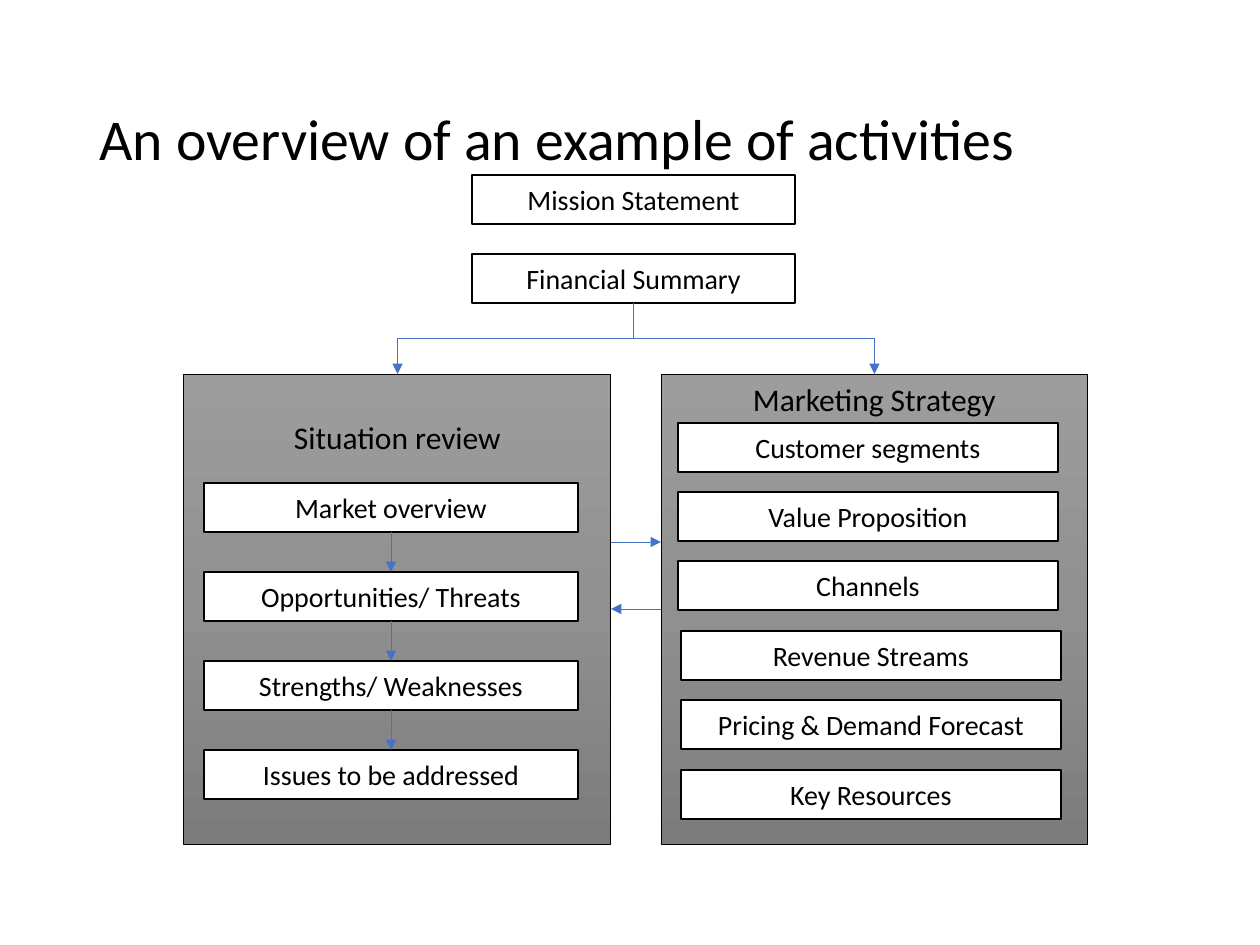
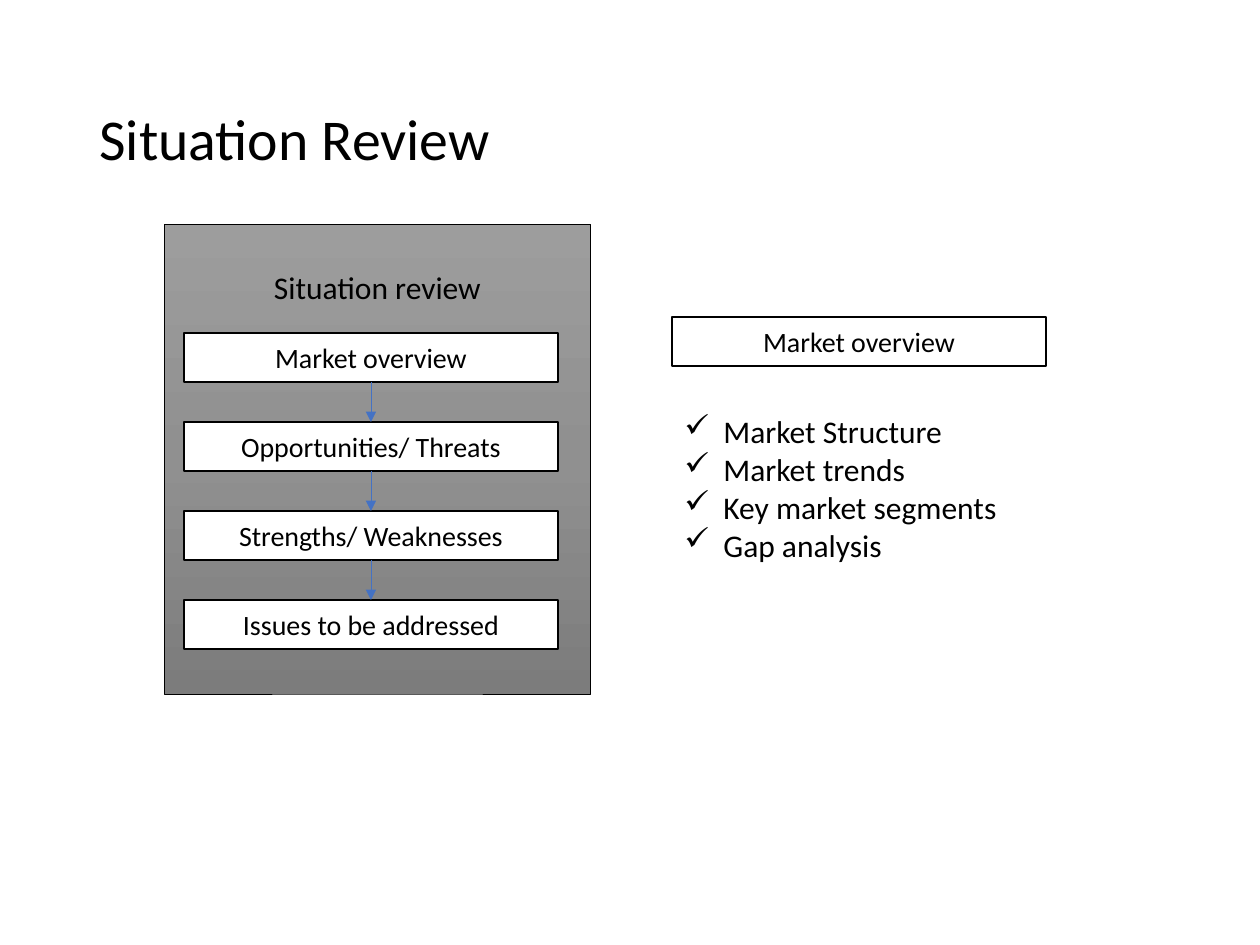
from lxml import etree
from pptx import Presentation
from pptx.dml.color import RGBColor
from pptx.enum.shapes import MSO_CONNECTOR, MSO_SHAPE
from pptx.enum.text import MSO_ANCHOR, MSO_AUTO_SIZE, PP_ALIGN
from pptx.oxml.ns import qn
from pptx.util import Emu, Pt

STRAIGHT, ELBOW = MSO_CONNECTOR.STRAIGHT, MSO_CONNECTOR.ELBOW
RECTANGLE = MSO_SHAPE.RECTANGLE
TOP, MIDDLE = MSO_ANCHOR.TOP, MSO_ANCHOR.MIDDLE
LEFT, CENTER = PP_ALIGN.LEFT, PP_ALIGN.CENTER
FIT_SHAPE = MSO_AUTO_SIZE.SHAPE_TO_FIT_TEXT
SIDE_TOP, SIDE_LEFT, SIDE_BOTTOM, SIDE_RIGHT = range(4)

PX_PER_INCH = 126
FONT = "Calibri"
COLORS = {
    "text": "000000",
    "outline": "000000",
    "box": "FFFFFF",
    "arrow": "4472C4",
    "panel_top": "9D9D9D",
    "panel_middle": "909090",
    "panel_bottom": "7C7C7C",
}
PANEL_STOPS = {0: "panel_top", 50000: "panel_middle", 100000: "panel_bottom"}
PANEL_WIDTH, PANEL_HEIGHT = 427, 470
PANEL_INSET, HEADING_LINE = 6, 38
BOX_HEIGHT = 49
STEP_WIDTH, STEP_PITCH = 374, 89
STEP_OFFSET_X, STEP_OFFSET_Y = 20, 109

REVIEW_STEPS = ["Market overview", "Opportunities/ Threats",
                "Strengths/ Weaknesses", "Issues to be addressed"]
STRATEGY_PARTS = ["Customer segments", "Value Proposition", "Channels",
                  "Revenue Streams", "Pricing & Demand Forecast", "Key Resources"]
OVERVIEW_POINTS = ["Market Structure", "Market trends",
                   "Key market segments", "Gap analysis"]


def px(length):
    """Turn px into EMU."""
    return Emu(round(length * 914400 / PX_PER_INCH))


def color(key):
    """Look up a colour of the palette."""
    return RGBColor.from_string(COLORS[key])


def format_text(frame, size, align, anchor):
    """Give all the text of a frame its font and alignment."""
    frame.word_wrap = True
    frame.vertical_anchor = anchor
    for paragraph in frame.paragraphs:
        paragraph.alignment = align
        for run in paragraph.runs:
            run.font.name = FONT
            run.font.size = Pt(size)
            run.font.color.rgb = color("text")


def add_title(slide, wording):
    """Add the slide title."""
    title = slide.shapes.add_textbox(px(87), px(50), px(1086), px(183))
    title.text_frame.text = wording
    title.text_frame.paragraphs[0].line_spacing = 0.9
    format_text(title.text_frame, 33, LEFT, MIDDLE)


def add_rectangle(slide, left, top, width, height, line_width):
    """Add an outlined rectangle without shadow."""
    rectangle = slide.shapes.add_shape(
        RECTANGLE, px(left), px(top), px(width), px(height))
    rectangle.shadow.inherit = False
    rectangle.line.color.rgb = color("outline")
    rectangle.line.width = Pt(line_width)
    return rectangle


def add_box(slide, label, left, top, width):
    """Add a white box with a centred label."""
    box = add_rectangle(slide, left, top, width, BOX_HEIGHT, 1)
    box.fill.solid()
    box.fill.fore_color.rgb = color("box")
    box.text_frame.text = label
    format_text(box.text_frame, 16, CENTER, MIDDLE)
    return box


def add_panel(slide, heading, left, top, heading_drop=0):
    """Add a grey gradient panel with its heading at the top."""
    panel = add_rectangle(slide, left, top, PANEL_WIDTH, PANEL_HEIGHT, 0.5)
    panel.fill.gradient()
    panel.fill.gradient_angle = 270
    stops = next(panel._element.iter(qn("a:gsLst")))
    for stop in list(stops):
        stops.remove(stop)
    for position, key in PANEL_STOPS.items():
        stop = etree.SubElement(stops, qn("a:gs"), pos=str(position))
        etree.SubElement(stop, qn("a:srgbClr"), val=COLORS[key])
    panel.text_frame.text = heading
    panel.text_frame.margin_top = px(PANEL_INSET + heading_drop)
    format_text(panel.text_frame, 18, CENTER, TOP)
    return panel


def add_arrow(slide, kind, start=(0, 0), end=(0, 0)):
    """Add a thin blue arrow between two points."""
    arrow = slide.shapes.add_connector(kind, *map(px, start + end))
    arrow.line.color.rgb = color("arrow")
    arrow.line.width = Pt(0.5)
    etree.SubElement(arrow.line._get_or_add_ln(), qn("a:tailEnd"), type="triangle")
    etree.SubElement(arrow._element.spPr, qn("a:effectLst"))
    return arrow


def join(slide, source, source_side, target, target_side, kind=STRAIGHT):
    """Join the sides of two rectangles with an arrow."""
    arrow = add_arrow(slide, kind)
    arrow.begin_connect(source, source_side)
    arrow.end_connect(target, target_side)
    return arrow


def add_branch(slide, source, target):
    """Add an elbow arrow that leaves downwards and enters from above."""
    branch = join(slide, source, SIDE_BOTTOM, target, SIDE_TOP, ELBOW)
    to_right = branch.end_x > branch.begin_x
    center_x = (branch.begin_x + branch.end_x) // 2
    center_y = (branch.begin_y + branch.end_y) // 2
    drop, reach = branch.height, branch.width
    branch.left, branch.top = center_x - drop // 2, center_y - reach // 2
    branch.width, branch.height = drop, reach
    frame = branch._element.spPr.find(qn("a:xfrm"))
    frame.set("rot", "16200000" if to_right else "5400000")
    frame.set("flipH", "1" if to_right else "0")


def add_review_panel(slide, left, top):
    """Add the situation review panel."""
    return add_panel(slide, "Situation review", left, top, HEADING_LINE)


def add_review_steps(slide, panel_left, panel_top):
    """Add the chain of review steps over its panel."""
    steps = [add_box(slide, label, panel_left + STEP_OFFSET_X,
                     panel_top + STEP_OFFSET_Y + index * STEP_PITCH, STEP_WIDTH)
             for index, label in enumerate(REVIEW_STEPS)]
    for step, following in zip(steps, steps[1:]):
        join(slide, step, SIDE_BOTTOM, following, SIDE_TOP)


def add_strategy_parts(slide, first_top, last_top):
    """Spread the strategy parts evenly, the lower half slightly indented."""
    last = len(STRATEGY_PARTS) - 1
    for index, label in enumerate(STRATEGY_PARTS):
        left = 678 if index <= last // 2 else 681
        top = first_top + (last_top - first_top) * index // last
        add_box(slide, label, left, top, 380)


def add_checklist(slide, points, left, top, width, height):
    """Add a list with check marks as bullets."""
    checklist = slide.shapes.add_textbox(px(left), px(top), px(width), px(height))
    frame = checklist.text_frame
    frame.text = "\n".join(points)
    format_text(frame, 18, LEFT, TOP)
    frame.auto_size = FIT_SHAPE
    indent = px(39)
    for paragraph in frame.paragraphs:
        properties = paragraph._p.get_or_add_pPr()
        properties.set("marL", str(indent))
        properties.set("indent", str(-indent))
        etree.SubElement(properties, qn("a:buChar"), char="✓")


def build_overview(slide):
    """Build the overview of activities."""
    review_left, strategy_left, panel_top = 184, 661, 374
    add_arrow(slide, STRAIGHT, (606, 542), (strategy_left, 542))
    strategy = add_panel(slide, "Marketing Strategy", strategy_left, panel_top)
    review = add_review_panel(slide, review_left, panel_top)
    add_box(slide, "Mission Statement", 472, 175, 323)
    summary = add_box(slide, "Financial Summary", 472, 254, 323)
    add_review_steps(slide, review_left, panel_top)
    add_strategy_parts(slide, 423, 770)
    add_title(slide, "An overview of an example of activities")
    for panel in (strategy, review):
        add_branch(slide, summary, panel)
    join(slide, strategy, SIDE_LEFT, review, SIDE_RIGHT)


def build_review(slide):
    """Build the situation review with its market overview."""
    panel_left, panel_top = 164, 224
    overview_left = 672
    add_title(slide, "Situation Review")
    add_review_panel(slide, panel_left, panel_top)
    add_review_steps(slide, panel_left, panel_top)
    add_box(slide, REVIEW_STEPS[0], overview_left, 317, STEP_WIDTH)
    add_checklist(slide, OVERVIEW_POINTS, overview_left, 406, STEP_WIDTH, 165)


def main():
    """Build and save the presentation."""
    presentation = Presentation()
    presentation.slide_width, presentation.slide_height = px(1260), px(945)
    blank = presentation.slide_layouts[6]
    for build in (build_overview, build_review):
        build(presentation.slides.add_slide(blank))
    presentation.save("out.pptx")


if __name__ == "__main__":
    main()
